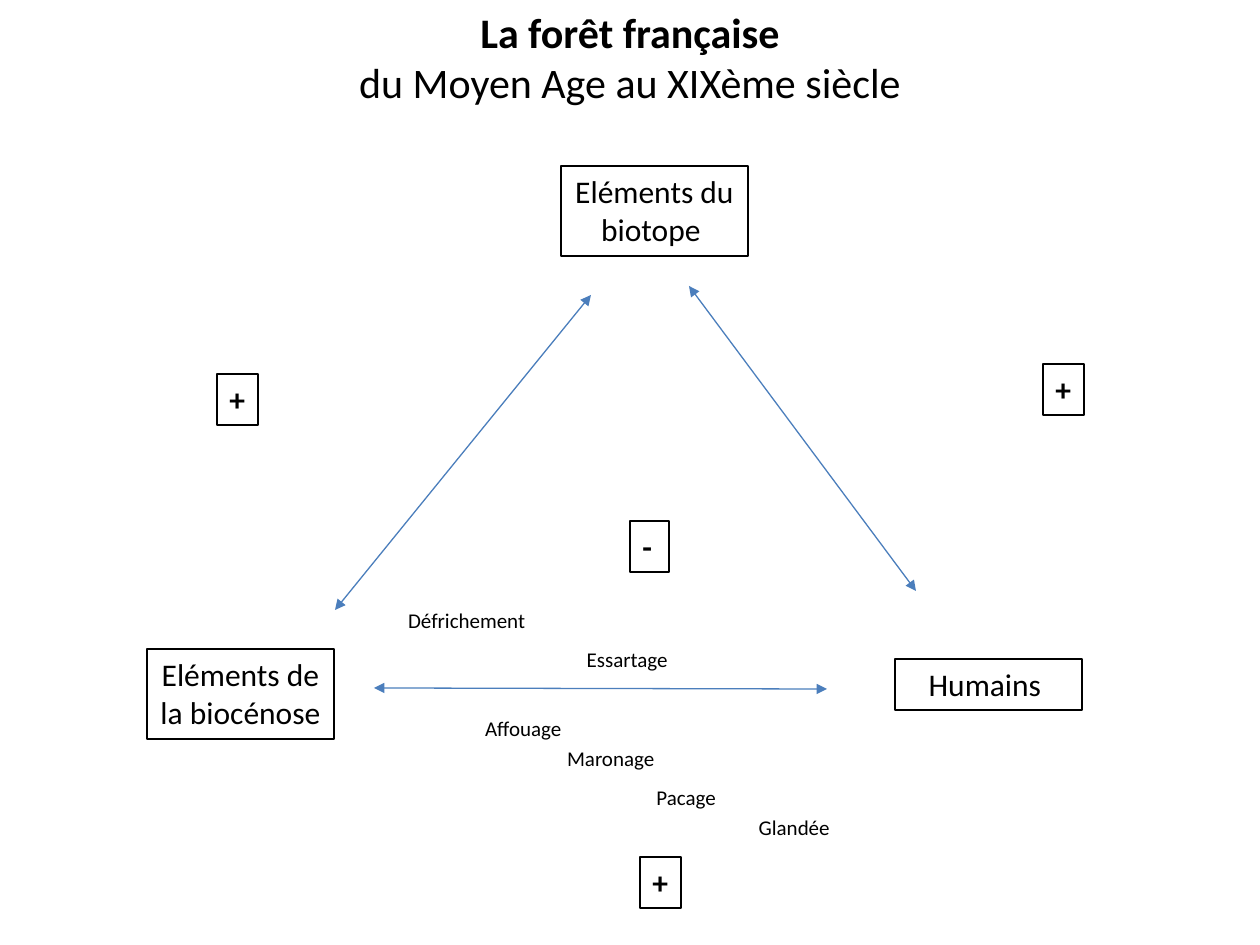
from lxml import etree
from pptx import Presentation, util as u
from pptx.dml.color import RGBColor
from pptx.enum import shapes, text
from pptx.oxml import ns

SCALE = 914400 / 126
BLACK = RGBColor(0x00, 0x00, 0x00)
BLUE = RGBColor(0x4B, 0x7E, 0xBC)
FONT = "Calibri"
CENTER = text.PP_ALIGN.CENTER
LEFT = text.PP_ALIGN.LEFT
INSET = 13
SPACE = 5


def px(*lengths):
    """Turn px into a list of EMU lengths."""
    return [u.Emu(round(n * SCALE)) for n in lengths]


def style(p, size, bold=False, align=CENTER):
    """Format a paragraph and its runs."""
    p.alignment = align
    for r in p.runs:
        r.font.name, r.font.size, r.font.bold = FONT, u.Pt(size), bold
        r.font.color.rgb = BLACK


def add_title(s, box, lines):
    """Fill the title placeholder with a bold first line and a plain second one."""
    sp = s.shapes.title
    sp.left, sp.top, sp.width, sp.height = px(*box)
    tf = sp.text_frame
    tf.text = "\n".join(lines)
    tf.vertical_anchor = text.MSO_ANCHOR.TOP
    tf.auto_size = text.MSO_AUTO_SIZE.NONE
    for i, p in enumerate(tf.paragraphs):
        style(p, 24, bold=i == 0)


def add_box(s, box, label, bold=False, align=CENTER, wrap=True):
    """Add an outlined, unfilled box with its label."""
    sp = s.shapes.add_shape(shapes.MSO_SHAPE.RECTANGLE, *px(*box))
    sp.shadow.inherit = False
    sp.fill.background()
    sp.line.color.rgb, sp.line.width = BLACK, u.Pt(0.75)
    tf = sp.text_frame
    tf.text = label
    tf.word_wrap = wrap
    tf.vertical_anchor = text.MSO_ANCHOR.TOP
    style(tf.paragraphs[0], 18, bold, align)


def add_arrow(s, start, end):
    """Add a thin line with an arrowhead at both ends."""
    c = s.shapes.add_connector(shapes.MSO_CONNECTOR.STRAIGHT, *px(*start, *end))
    c.line.color.rgb, c.line.width = BLUE, u.Pt(0.75)
    for tag in ("a:headEnd", "a:tailEnd"):
        etree.SubElement(c.line._ln, ns.qn(tag), type="triangle")
    etree.SubElement(c._element.spPr, ns.qn("a:effectLst"))


def add_practices(s, box, practices):
    """Scatter the names of forest practices from the corner of a box."""
    left, top = box[:2]
    for label, dx, dy, spaces in practices:
        sp = s.shapes.add_textbox(*px(left + dx, top + dy, 158, 39))
        tf = sp.text_frame
        tf.text = label
        tf.word_wrap = True
        tf.margin_right = px(INSET + spaces * SPACE)[0]
        style(tf.paragraphs[0], 12)


def add_triangle(s, box):
    """Add the three poles, the arrows between them and the signs."""
    left, top = box[:2]
    poles = [("Eléments de la biocénose", 147, 534, 90),
             ("Eléments du biotope ", 561, 51, 90),
             ("Humains ", 895, 544, 51)]
    for label, x, y, height in poles:
        add_box(s, (left + x, top + y, 187, height), label)
    arrows = [((916, 476), (689, 171)), ((827, 574), (374, 573)),
              ((335, 495), (591, 180))]
    for ends in arrows:
        add_arrow(s, *[(left + x, top + y) for x, y in ends])
    signs = [("+", 1043, 249), ("-", 630, 406), ("+", 217, 259), ("+", 640, 742)]
    for label, x, y in signs:
        width = 41 if label == "+" else 39
        add_box(s, (left + x, top + y, width, 51), label, True, LEFT, False)


def main():
    """Build the slide and save it."""
    prs = Presentation()
    prs.slide_width, prs.slide_height = px(1260, 945)
    s = prs.slides.add_slide(prs.slide_layouts[5])
    add_title(s, (0, 0, 1260, 115),
              ("La forêt française", "du Moyen Age au XIXème siècle"))
    add_triangle(s, (0, 115, 1260, 830))
    add_practices(s, (393, 601, 493, 246), [
        ("Défrichement", 0, 0, 2), ("Essartage", 158, 39, 1),
        ("Affouage", 59, 108, 3), ("Maronage", 149, 138, 4),
        ("Pacage", 227, 177, 5), ("Glandée", 335, 207, 5)])
    prs.save("out.pptx")


if __name__ == "__main__":
    main()
